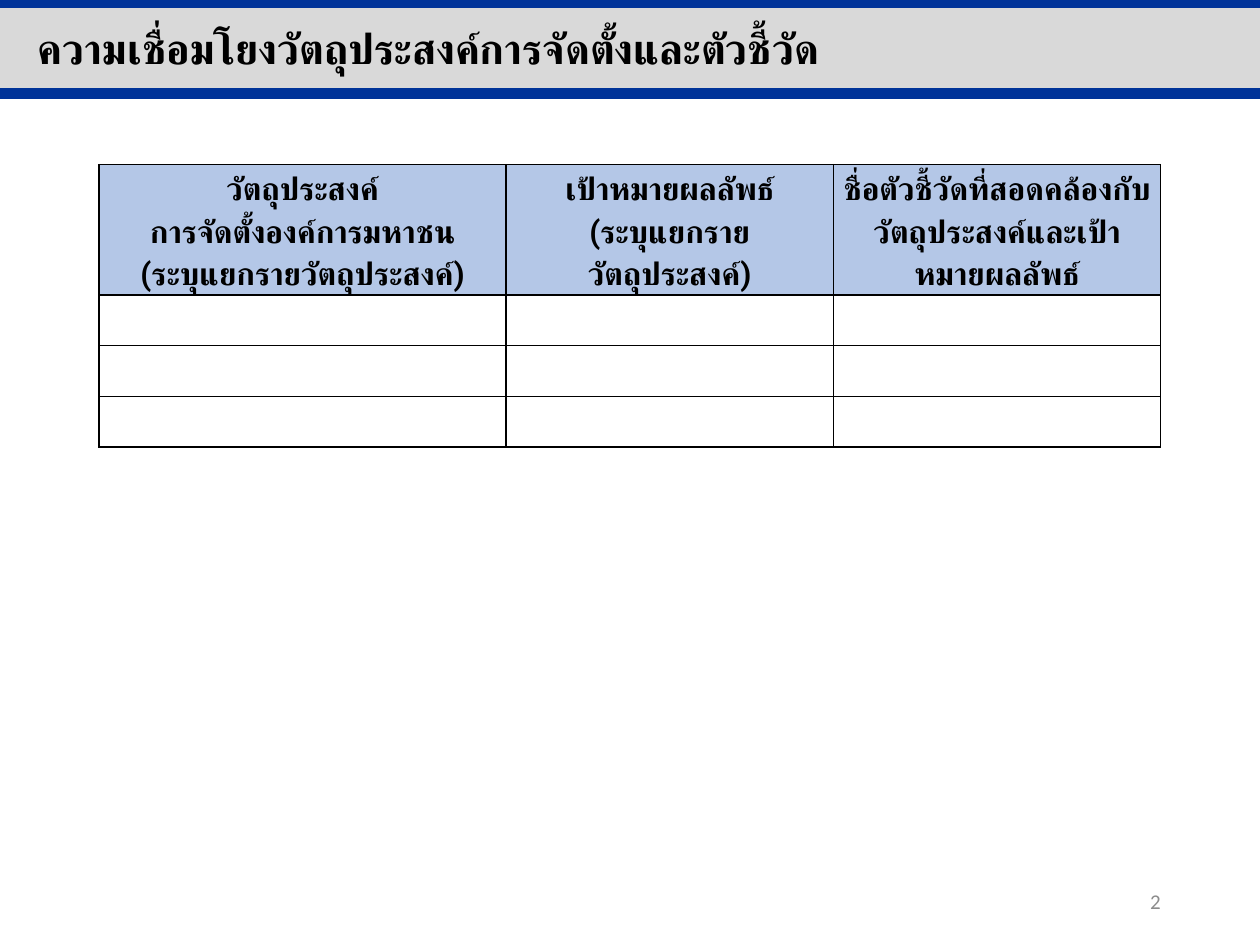
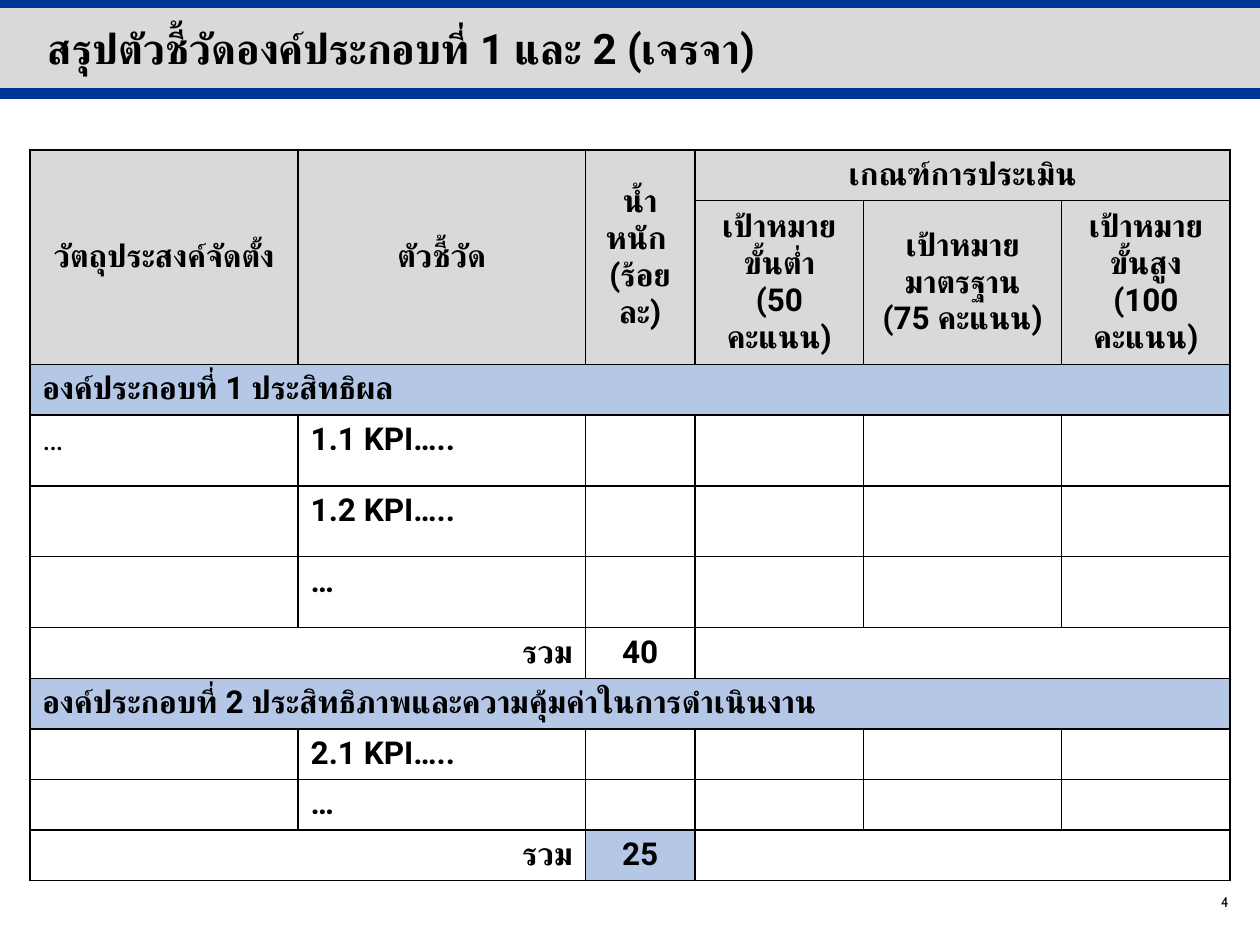
"""Build two slides that link the founding objectives with their indicators."""
from lxml.etree import SubElement
from pptx import Presentation
from pptx.dml.color import RGBColor
from pptx.enum.shapes import MSO_CONNECTOR, MSO_SHAPE
from pptx.enum.text import MSO_ANCHOR, MSO_AUTO_SIZE, PP_ALIGN
from pptx.oxml import parse_xml
from pptx.oxml.ns import nsdecls, qn
from pptx.util import Cm, Pt

BLACK = RGBColor(0x00, 0x00, 0x00)
WHITE = RGBColor(0xFF, 0xFF, 0xFF)
GREY = RGBColor(0xD9, 0xD9, 0xD9)
NUMBER_GREY = RGBColor(0x8C, 0x8C, 0x8C)
NAVY = RGBColor(0x00, 0x33, 0x99)
PALE_BLUE = RGBColor(0xB4, 0xC7, 0xE7)
FONT = "Roboto"
ROW_HEIGHT = 1.02
KPI_HEIGHT = 1.43


class Slides:
    def __init__(self):
        self.deck = Presentation()
        self.deck.slide_width, self.deck.slide_height = Cm(25.4), Cm(19.05)
        self.layout = self.deck.slide_layouts[5]
        self.page = None

    def add_page(self, title, left, width):
        first = self.page is None
        self.page = self.deck.slides.add_slide(self.layout)
        if first:
            self.share_header()
        box = self.page.shapes.title
        box.left, box.top, box.width, box.height = Cm(left), Cm(0.33), Cm(width), Cm(1.27)
        frame = box.text_frame
        frame.word_wrap = True
        frame.auto_size = MSO_AUTO_SIZE.NONE
        frame.vertical_anchor = MSO_ANCHOR.TOP
        self.put_text(frame, title, size=24)

    def share_header(self):
        band = self.page.shapes.add_shape(MSO_SHAPE.RECTANGLE, 0, Cm(0.13), Cm(25.4), Cm(1.73))
        band.shadow.inherit = False
        band.fill.solid()
        band.fill.fore_color.rgb = GREY
        band.line.fill.background()
        header = [band, self.add_rule(1.88), self.add_rule(0.05)]
        for position, shape in enumerate(header):
            shape.element.xpath(".//p:cNvPr")[0].set("id", str(20 + position))
            self.layout.shapes.element.insert(2 + position, shape.element)

    def add_rule(self, top):
        rule = self.page.shapes.add_connector(
            MSO_CONNECTOR.STRAIGHT, 0, Cm(top), Cm(25.4), Cm(top))
        rule.line.color.rgb = NAVY
        rule.line.width = Pt(6)
        SubElement(rule.element.spPr, qn("a:effectLst"))
        return rule

    def put_text(self, frame, text, size=18, font=FONT, color=BLACK, bold=True,
                 align=PP_ALIGN.LEFT, spacing=None):
        for index, content in enumerate(text.split("\n")):
            para = frame.add_paragraph() if index else frame.paragraphs[0]
            para.text = content
            para.alignment = align
            if spacing:
                para.line_spacing = spacing
            para.font.size = Pt(size)
            para.font.bold = bold
            para.font.color.rgb = color
            para.font.name = font
            defaults = para._p.pPr.find(qn("a:defRPr"))
            SubElement(defaults, qn("a:cs")).set("typeface", font)

    def add_number(self, text, left, top, width, height, **style):
        box = self.page.shapes.add_textbox(Cm(left), Cm(top), Cm(width), Cm(height))
        box.text_frame.word_wrap = True
        box.text_frame.vertical_anchor = MSO_ANCHOR.MIDDLE
        self.put_text(box.text_frame, text, bold=False, align=PP_ALIGN.RIGHT, **style)

    def add_table(self, left, top, widths, heights):
        table = self.page.shapes.add_table(
            len(heights), len(widths), Cm(left), Cm(top),
            Cm(sum(widths)), Cm(sum(heights))).table
        table.first_row = table.horz_banding = False
        for column, width in zip(table.columns, widths):
            column.width = Cm(width)
        for row, height in zip(table.rows, heights):
            row.height = Cm(height)
        for cell in table.iter_cells():
            self.paint(cell, WHITE)
            for position, side in enumerate("LRTB"):
                cell._tc.tcPr.insert(position, parse_xml(
                    f'<a:ln{side} {nsdecls("a")} w="12700"><a:solidFill>'
                    f'<a:srgbClr val="{BLACK}"/></a:solidFill></a:ln{side}>'))
        return table

    def paint(self, cell, color):
        cell.fill.solid()
        cell.fill.fore_color.rgb = color

    def head(self, cell, text, color, spacing=None):
        self.paint(cell, color)
        cell.vertical_anchor = MSO_ANCHOR.MIDDLE
        self.put_text(cell.text_frame, text, align=PP_ALIGN.CENTER, spacing=spacing)


def build_objectives(slides):
    slides.add_page("ความเชื่อมโยงวัตถุประสงค์การจัดตั้งและตัวชี้วัด", 0.51, 24.89)
    slides.add_number("2", 17.93, 17.65, 5.72, 1.02, size=12, font="Calibri", color=NUMBER_GREY)
    table = slides.add_table(2, 3.32, [8.2, 6.6, 6.6], [2.44] + [ROW_HEIGHT] * 3)
    headings = [
        "วัตถุประสงค์\nการจัดตั้งองค์การมหาชน\n(ระบุแยกรายวัตถุประสงค์)",
        "เป้าหมายผลลัพธ์\v(ระบุแยกรายวัตถุประสงค์)",
        "ชื่อตัวชี้วัดที่สอดคล้องกับวัตถุประสงค์และเป้าหมายผลลัพธ์",
    ]
    for cell, heading in zip(table.rows[0].cells, headings):
        cell.margin_left = cell.margin_right = Cm(0.15)
        cell.margin_top = cell.margin_bottom = 0
        slides.head(cell, heading, PALE_BLUE, spacing=1.15)


def build_summary(slides):
    slides.add_page("สรุปตัวชี้วัดองค์ประกอบที่ 1 และ 2 (เจรจา)", 0.71, 15.52)
    slides.add_number("4", 23.65, 17.75, 1.37, 0.86, size=8, font="Cabin")
    heights = [ROW_HEIGHT, 3.29, ROW_HEIGHT] + [KPI_HEIGHT] * 3 + [ROW_HEIGHT] * 5
    table = slides.add_table(0.6, 3.02, [5.41, 5.79, 2.21, 3.4, 3.99, 3.4], heights)

    for column, heading in enumerate(["วัตถุประสงค์จัดตั้ง", "ตัวชี้วัด", "น้ำหนัก \n(ร้อยละ)"]):
        table.cell(0, column).merge(table.cell(1, column))
        slides.head(table.cell(0, column), heading, GREY)
    table.cell(0, 3).merge(table.cell(0, 5))
    slides.head(table.cell(0, 3), "เกณฑ์การประเมิน", GREY)
    targets = ["เป้าหมายขั้นต่ำ\n(50 คะแนน)", "เป้าหมายมาตรฐาน\n(75 คะแนน)",
               "เป้าหมายขั้นสูง\n(100 คะแนน)"]
    for column, target in enumerate(targets, 3):
        slides.head(table.cell(1, column), target, GREY)

    sections = [
        (2, "องค์ประกอบที่ 1 ประสิทธิผล", ["1.1 KPI…..", "1.2 KPI…..", "…"], "40", WHITE),
        (7, "องค์ประกอบที่ 2 ประสิทธิภาพและความคุ้มค่าในการดำเนินงาน",
         ["2.1 KPI…..", "…"], "25", PALE_BLUE),
    ]
    for start, name, indicators, weight, weight_color in sections:
        table.cell(start, 0).merge(table.cell(start, 5))
        slides.paint(table.cell(start, 0), PALE_BLUE)
        slides.put_text(table.cell(start, 0).text_frame, name)
        for row, indicator in enumerate(indicators, start + 1):
            slides.put_text(table.cell(row, 1).text_frame, indicator)
        total = start + len(indicators) + 1
        table.cell(total, 0).merge(table.cell(total, 1))
        table.cell(total, 3).merge(table.cell(total, 5))
        slides.put_text(table.cell(total, 0).text_frame, "รวม", align=PP_ALIGN.RIGHT)
        slides.paint(table.cell(total, 2), weight_color)
        slides.put_text(table.cell(total, 2).text_frame, weight, align=PP_ALIGN.CENTER)
    slides.put_text(table.cell(3, 0).text_frame, "…", bold=False)


def main():
    slides = Slides()
    build_objectives(slides)
    build_summary(slides)
    slides.deck.save("out.pptx")


if __name__ == "__main__":
    main()
